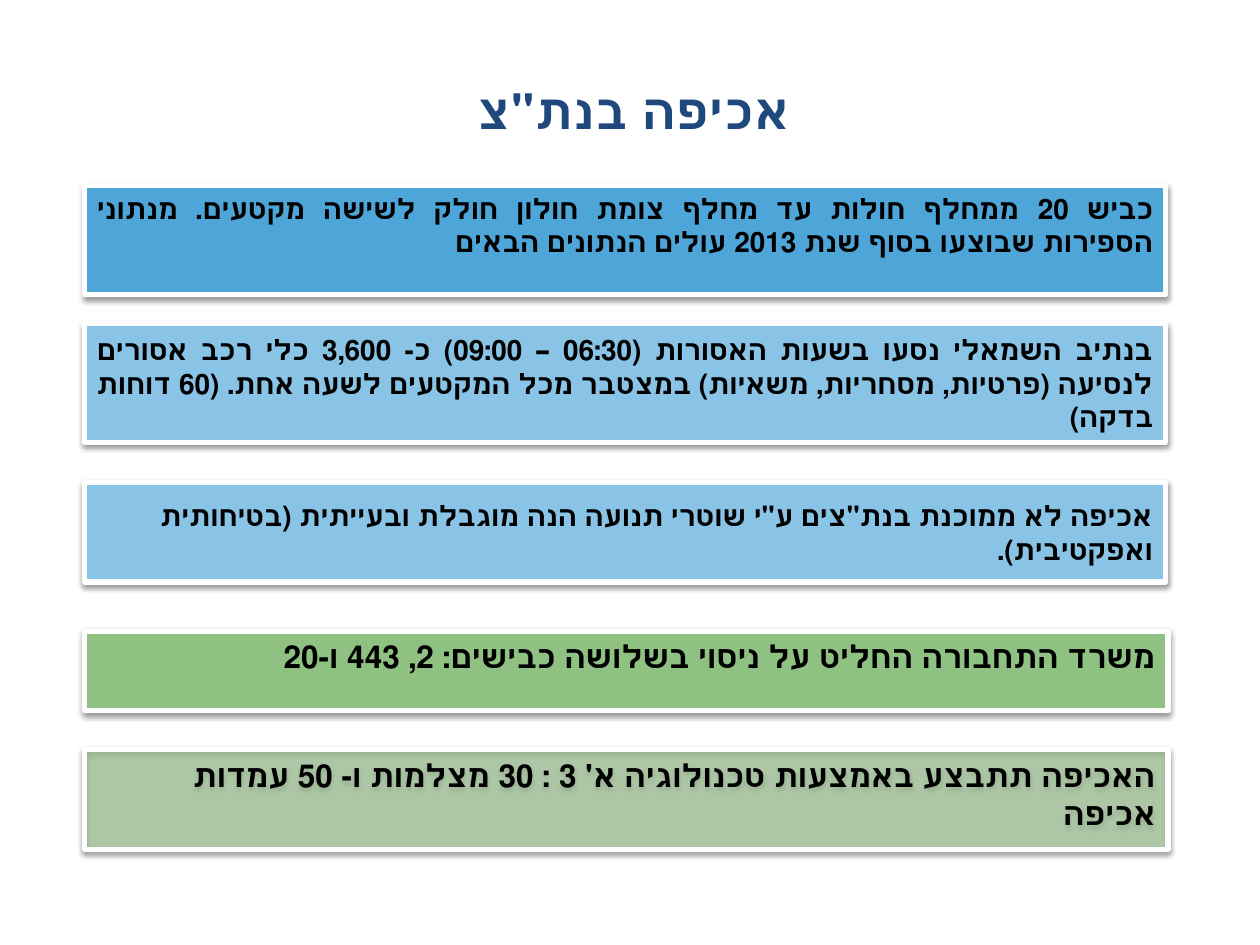
"""Build the slide on bus lane enforcement."""
from lxml.etree import SubElement as Sub
from pptx import Presentation as Deck
from pptx.dml.color import RGBColor as RGB
from pptx.enum.shapes import MSO_SHAPE as Shape
from pptx.enum.text import MSO_ANCHOR as Anchor, MSO_AUTO_SIZE as Fit, PP_ALIGN as Align
from pptx.oxml.ns import qn
from pptx.util import Inches, Pt

HUES = {"navy": "1F497D", "blue": "4EA5D8", "sky": "89C3E5", "green": "8EC182",
        "black": "000000", "white": "FFFFFF"}


def tint(name):
    return RGB.from_string(HUES[name])


def write(shape, text, size, hue, align, anchor):
    frame = shape.text_frame
    look = {"word_wrap": True, "auto_size": Fit.NONE, "vertical_anchor": anchor}
    for key, val in look.items():
        setattr(frame, key, val)
    para = frame.paragraphs[0]
    para.alignment = align
    para._p.get_or_add_pPr().set("rtl", "1")
    run = para.add_run()
    run.text = text
    for key, val in {"size": Pt(size), "bold": True, "name": "Cabin"}.items():
        setattr(run.font, key, val)
    run.font.color.rgb = tint(hue)
    return para, run


deck = Deck()
deck.slide_width, deck.slide_height = Inches(10), Inches(7.5)
slide = deck.slides.add_slide(deck.slide_layouts[5])

title = slide.shapes.title
spot = {"left": 0.33, "top": 0.52, "width": 9.4, "height": 0.47}
for key, val in spot.items():
    setattr(title, key, Inches(val))
para, run = write(title, 'אכיפה בנת"צ', 28, "navy", Align.CENTER, Anchor.MIDDLE)
para.line_spacing = 1.5
run._r.get_or_add_rPr().set("spc", "50")

LEFT, WIDE, WIDER = 0.67, 8.58, 8.6
bars = [
    (1.47, WIDE, 0.87, "blue", 16, Align.JUSTIFY, Anchor.TOP,
     "כביש 20 ממחלף חולות עד מחלף צומת חולון חולק לשישה מקטעים. "
     "מנתוני הספירות שבוצעו בסוף שנת 2013 עולים הנתונים הבאים"),
    (2.57, WIDE, 0.94, "sky", 16, Align.JUSTIFY, Anchor.MIDDLE,
     "בנתיב השמאלי נסעו בשעות האסורות (06:30 – 09:00) כ- 3,600 כלי רכב אסורים לנסיעה "
     "(פרטיות, מסחריות, משאיות) במצטבר מכל המקטעים לשעה אחת. (60 דוחות בדקה)"),
    (3.83, WIDE, 0.79, "sky", 16, Align.RIGHT, Anchor.MIDDLE,
     'אכיפה לא ממוכנת בנת"צים ע"י שוטרי תנועה הנה מוגבלת ובעייתית (בטיחותית ואפקטיבית).'),
    (5.01, WIDER, 0.63, "green", 18, Align.RIGHT, Anchor.TOP,
     "משרד התחבורה החליט על ניסוי בשלושה כבישים: 2, 443 ו-20"),
    (5.95, WIDER, 0.79, "green", 18, Align.RIGHT, Anchor.TOP,
     "האכיפה תתבצע באמצעות טכנולוגיה א' 3 : 30 מצלמות ו- 50 עמדות אכיפה"),
]
shade = {"blurRad": Pt(3.1), "dist": Pt(1.6), "dir": 90 * 60000, "rotWithShape": 0}

for top, wide, high, hue, size, align, anchor, text in bars:
    bar = slide.shapes.add_shape(Shape.RECTANGLE, *map(Inches, (LEFT, top, wide, high)))
    bar.fill.solid()
    bar.fill.fore_color.rgb = tint(hue)
    bar.line.color.rgb = tint("white")
    bar.line.width = Pt(3)
    bar.shadow.inherit = False
    glow = Sub(bar._element.spPr.find(qn("a:effectLst")), qn("a:outerShdw"),
               {key: str(val) for key, val in shade.items()})
    ink = Sub(glow, qn("a:srgbClr"), val=HUES["black"])
    Sub(ink, qn("a:alpha"), val="38000")
    write(bar, text, size, "black", align, anchor)

paint = bar._element.spPr.find(qn("a:solidFill"))
Sub(paint[0], qn("a:alpha"), val="51000")

deck.save("out.pptx")
